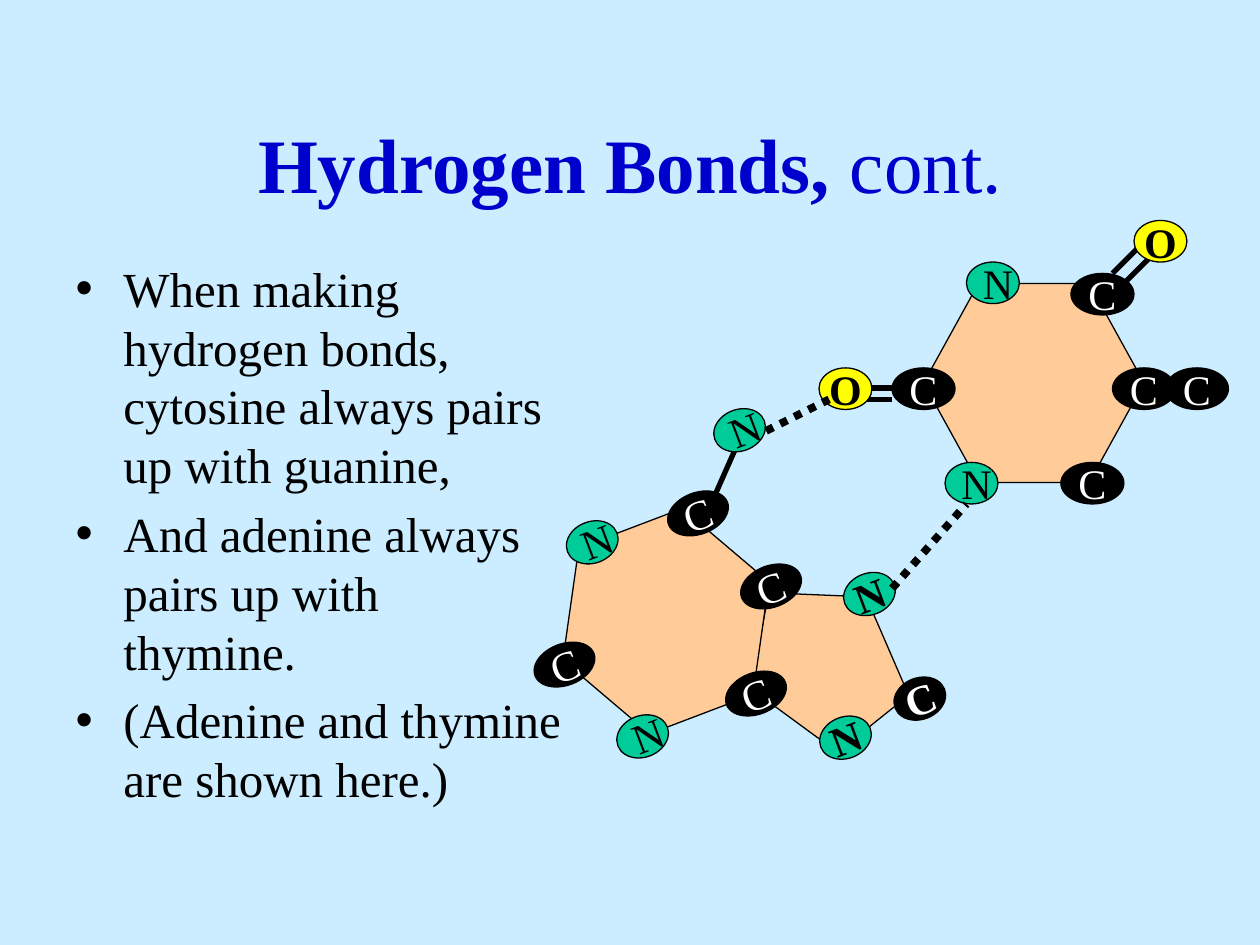
from typing import NamedTuple

from lxml.etree import SubElement
from pptx import Presentation
from pptx.dml.color import RGBColor
from pptx.enum.dml import MSO_LINE_DASH_STYLE as Dash
from pptx.enum.shapes import MSO_CONNECTOR, MSO_SHAPE
from pptx.enum.text import MSO_ANCHOR, PP_ALIGN
from pptx.oxml.ns import qn
from pptx.util import Inches, Pt

FONT = "Times New Roman"
BLACK = "000000"
TILT = 339.2  # rotation of the lower molecule


class Element(NamedTuple):
    fill: str
    text_color: str


class Ring(NamedTuple):
    shape_type: MSO_SHAPE
    left: float
    top: float
    width: float
    height: float
    rotation: float = 0


class Bond(NamedTuple):
    x1: float
    y1: float
    x2: float
    y2: float


class Atom(NamedTuple):
    symbol: str
    left: float
    top: float
    width: float = 0.42
    label: str = ""
    bold: bool = False


class Molecule(NamedTuple):
    rotation: float
    rings: list[Ring]
    bonds: list[Bond]
    atoms: list[Atom]


def carbon(left: float, top: float) -> Atom:
    return Atom("C", left, top, width=0.5)


def nitrogen(left: float, top: float) -> Atom:
    return Atom("N", left, top, label=" N")


ELEMENTS = {
    "C": Element(BLACK, "FFFFFF"),
    "N": Element("00CC99", BLACK),
    "O": Element("FFFF00", BLACK),
}

LOWER = Molecule(
    TILT,
    rings=[
        Ring(MSO_SHAPE.REGULAR_PENTAGON, 5.93, 4.56, 1.17, 1.33, 321.4),
        Ring(MSO_SHAPE.HEXAGON, 4.41, 4.14, 1.75, 1.58, TILT),
    ],
    bonds=[Bond(5.67, 3.94, 5.86, 3.51)],
    atoms=[
        carbon(5.29, 3.91), carbon(5.87, 4.49), carbon(5.75, 5.34), carbon(4.23, 5.11),
        nitrogen(4.49, 4.14), nitrogen(4.89, 5.68), nitrogen(5.66, 3.25),
        Atom("N", 6.5, 5.69, bold=True),
        Atom("N", 6.69, 4.55, bold=True),
        Atom("C", 7.09, 5.38, bold=True),
    ],
)

UPPER = Molecule(
    0,
    rings=[Ring(MSO_SHAPE.HEXAGON, 7.33, 2.25, 1.75, 1.58)],
    bonds=[
        Bond(8.92, 2.25, 9.25, 1.92), Bond(8.83, 2.17, 9.17, 1.83),
        Bond(7.08, 3.17, 6.83, 3.17), Bond(7.08, 3.08, 6.83, 3.08),
    ],
    atoms=[
        carbon(8.5, 2.17), carbon(8.83, 2.92), carbon(8.42, 3.67), carbon(7.08, 2.92),
        nitrogen(7.67, 2.08), nitrogen(7.5, 3.67),
        Atom("O", 6.5, 2.92, bold=True),
        Atom("O", 9, 1.75, bold=True),
        carbon(9.25, 2.92),
    ],
)

HYDROGEN_BONDS = [Bond(6.08, 3.42, 6.58, 3.17), Bond(7.08, 4.67, 7.67, 4)]

BULLETS = [
    ["When making hydrogen bonds, cytosine always pairs up with guanine,"],
    ["And adenine always pairs up with", "thymine."],
    ["(Adenine and thymine are shown here.)"],
]


def rgb(color: str) -> RGBColor:
    return RGBColor.from_string(color)


def place(shape, left: float, top: float, width: float, height: float) -> None:
    shape.left, shape.top = Inches(left), Inches(top)
    shape.width, shape.height = Inches(width), Inches(height)


def add_run(paragraph, text: str, size: float, color: str, bold: bool = False) -> None:
    run = paragraph.add_run()
    run.text = text
    run.font.name = FONT
    run.font.size = Pt(size)
    run.font.bold = bold
    run.font.color.rgb = rgb(color)


def add_outlined(slide, shape_type, left, top, width, height, rotation, fill: str):
    shape = slide.shapes.add_shape(
        shape_type, Inches(left), Inches(top), Inches(width), Inches(height))
    shape.rotation = rotation
    shape.shadow.inherit = False
    shape.fill.solid()
    shape.fill.fore_color.rgb = rgb(fill)
    shape.line.color.rgb = rgb(BLACK)
    shape.line.width = Pt(0.75)
    return shape


def draw_ring(slide, ring: Ring) -> None:
    shape = add_outlined(slide, *ring, "FFCC99")
    if ring.shape_type == MSO_SHAPE.HEXAGON:
        shape.adjustments[0] = 0.276


def draw_bond(slide, bond: Bond, width: float = 3, dash=None) -> None:
    line = slide.shapes.add_connector(
        MSO_CONNECTOR.STRAIGHT, *(Inches(value) for value in bond))
    line.line.color.rgb = rgb(BLACK)
    line.line.width = Pt(width)
    if dash is not None:
        line.line.dash_style = dash
    SubElement(line._element.spPr, qn("a:effectLst"))


def draw_atom(slide, atom: Atom, rotation: float) -> None:
    element = ELEMENTS[atom.symbol]
    shape = add_outlined(slide, MSO_SHAPE.OVAL, atom.left, atom.top,
                         atom.width, 0.33, rotation, element.fill)
    frame = shape.text_frame
    frame.word_wrap = False
    frame.vertical_anchor = MSO_ANCHOR.MIDDLE
    paragraph = frame.paragraphs[0]
    paragraph.alignment = PP_ALIGN.CENTER
    add_run(paragraph, atom.label or atom.symbol, 24, element.text_color, atom.bold)


def draw_molecule(slide, molecule: Molecule) -> None:
    for ring in molecule.rings:
        draw_ring(slide, ring)
    for bond in molecule.bonds:
        draw_bond(slide, bond)
    for atom in molecule.atoms:
        draw_atom(slide, atom, molecule.rotation)


def write_title(title) -> None:
    place(title, 0.75, 0.67, 8.5, 1.25)
    title.text_frame.vertical_anchor = MSO_ANCHOR.MIDDLE
    paragraph = title.text_frame.paragraphs[0]
    paragraph.alignment = PP_ALIGN.CENTER
    add_run(paragraph, "Hydrogen Bonds, ", 44, "0000CC", bold=True)
    add_run(paragraph, "cont.", 44, "0000CC")


def write_bullets(body) -> None:
    place(body, 0.5, 2, 4.17, 4.5)
    frame = body.text_frame
    for index, lines in enumerate(BULLETS):
        paragraph = frame.add_paragraph() if index else frame.paragraphs[0]
        properties = paragraph._p.get_or_add_pPr()
        properties.set("marL", str(Inches(0.38)))
        properties.set("indent", str(-Inches(0.38)))
        SubElement(properties, qn("a:buChar"), char="•")
        paragraph.space_before = Pt(5.6 if index else 0)
        for number, line in enumerate(lines):
            if number:
                paragraph.add_line_break()
            add_run(paragraph, line, 28, BLACK)


def main() -> None:
    presentation = Presentation()
    presentation.slide_width, presentation.slide_height = Inches(10), Inches(7.5)
    slide = presentation.slides.add_slide(presentation.slide_layouts[1])
    slide.background.fill.solid()
    slide.background.fill.fore_color.rgb = rgb("CCECFF")
    write_title(slide.shapes.title)
    write_bullets(slide.placeholders[1])
    for molecule in (LOWER, UPPER):
        draw_molecule(slide, molecule)
    for bond in HYDROGEN_BONDS:
        draw_bond(slide, bond, 4.5, Dash.ROUND_DOT)
    presentation.save("out.pptx")


if __name__ == "__main__":
    main()
